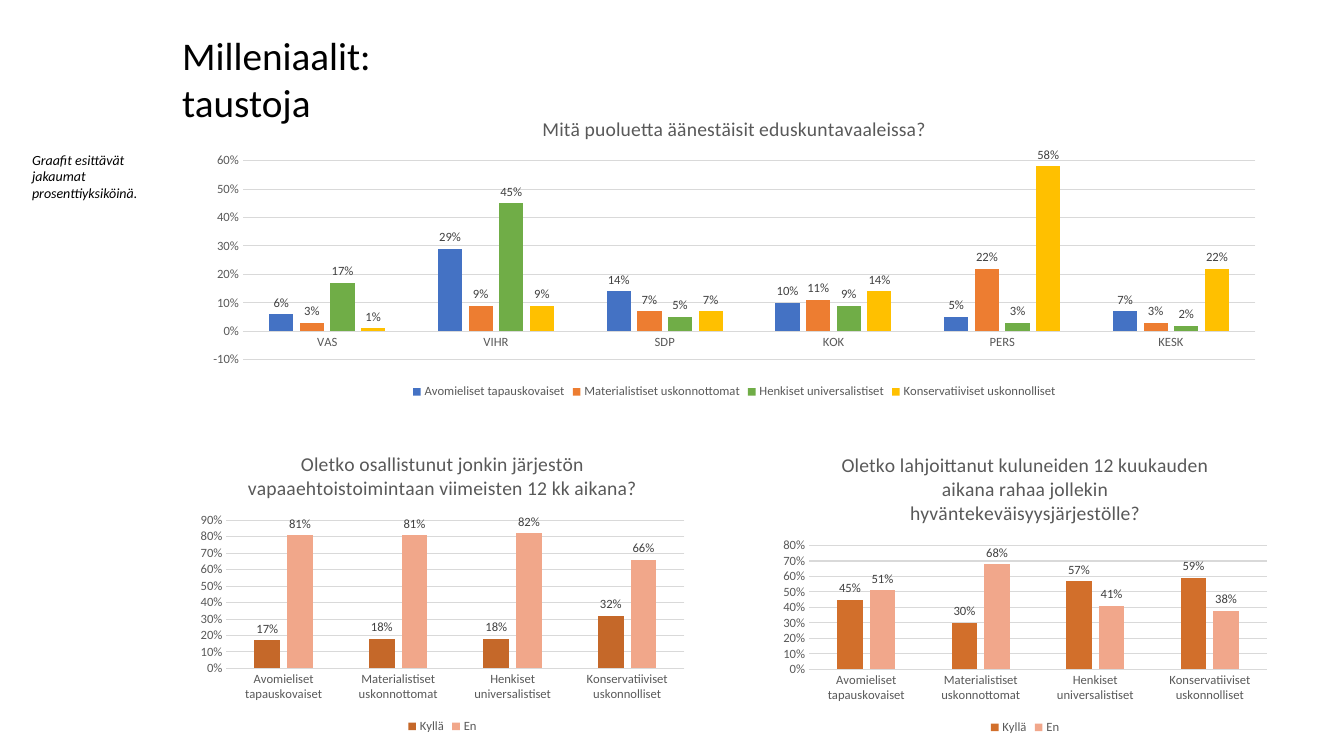
from pptx import Presentation
from pptx.chart.data import CategoryChartData
from pptx.dml.color import RGBColor
from pptx.enum.chart import XL_CHART_TYPE, XL_LABEL_POSITION, XL_LEGEND_POSITION, XL_TICK_MARK
from pptx.util import Pt

FONT = "Calibri"
GREY, LABEL, GRID, BLACK = "595959", "404040", "D9D9D9", "000000"
GROUPS = ["Avomieliset tapauskovaiset", "Materialistiset uskonnottomat",
          "Henkiset universalistiset", "Konservatiiviset uskonnolliset"]

CHARTS = [
    {"title": "Mitä puoluetta äänestäisit eduskuntavaaleissa?",
     "box": (136.8, 71.28, 775.44, 216.72), "scale": (-0.1, 0.6),
     "categories": ["VAS", "VIHR", "SDP", "KOK", "PERS", "KESK"],
     "series": [(GROUPS[0], "4472C4", (0.06, 0.29, 0.14, 0.10, 0.05, 0.07)),
                (GROUPS[1], "ED7D31", (0.03, 0.09, 0.07, 0.11, 0.22, 0.03)),
                (GROUPS[2], "70AD47", (0.17, 0.45, 0.05, 0.09, 0.03, 0.02)),
                (GROUPS[3], "FFC000", (0.01, 0.09, 0.07, 0.14, 0.58, 0.22))]},
    {"title": "Oletko osallistunut jonkin järjestön vapaaehtoistoimintaan viimeisten 12 kk aikana?",
     "box": (136.08, 311.04, 360, 216), "scale": (0, 0.9),
     "categories": GROUPS,
     "series": [("Kyllä", "C56829", (0.17, 0.18, 0.18, 0.32)),
                ("En", "F1A78A", (0.81, 0.81, 0.82, 0.66))]},
    {"title": "Oletko lahjoittanut kuluneiden 12 kuukauden aikana rahaa jollekin "
              "hyväntekeväisyysjärjestölle?",
     "box": (552.24, 311.76, 360, 216), "scale": (0, 0.8),
     "categories": GROUPS,
     "series": [("Kyllä", "D26F2B", (0.45, 0.30, 0.57, 0.59)),
                ("En", "F1A78B", (0.51, 0.68, 0.41, 0.38))]},
]

TEXTS = [
    ("Milleniaalit: taustoja", (123.12, 18.72, 244.8, 41.04), 28, False, 60),
    ("Graafit esittävät jakaumat prosenttiyksiköinä.", (15.84, 104.4, 95.76, 43.92), 10, True, 7.2),
]


def rgb(color):
    return RGBColor.from_string(color)


def style_font(font, size, color, italic=False):
    font.name, font.size = FONT, Pt(size)
    font.bold, font.italic = False, italic
    font.color.rgb = rgb(color)


def style_line(line):
    line.color.rgb = rgb(GRID)
    line.width = Pt(0.75)


def style_axes(chart, scale):
    cat, val = chart.category_axis, chart.value_axis
    for axis in (cat, val):
        axis.major_tick_mark = axis.minor_tick_mark = XL_TICK_MARK.NONE
        style_font(axis.tick_labels.font, 9, GREY)
    style_line(cat.format.line)
    val.format.line.fill.background()
    val.has_major_gridlines = True
    style_line(val.major_gridlines.format.line)
    val.minimum_scale, val.maximum_scale = scale
    val.major_unit = 0.1
    val.tick_labels.number_format = "0%"
    val.tick_labels.number_format_is_linked = False


def style_series(series, color):
    series.format.fill.solid()
    series.format.fill.fore_color.rgb = rgb(color)
    series.invert_if_negative = False
    labels = series.data_labels
    labels.show_value = True
    labels.position = XL_LABEL_POSITION.OUTSIDE_END
    labels.number_format = "0%"
    labels.number_format_is_linked = False
    style_font(labels.font, 9, LABEL)


def add_column_chart(s, content):
    data = CategoryChartData(number_format="0%")
    data.categories = content["categories"]
    for name, _, values in content["series"]:
        data.add_series(name, values)
    box = [Pt(v) for v in content["box"]]
    chart = s.shapes.add_chart(XL_CHART_TYPE.COLUMN_CLUSTERED, *box, data).chart
    style_font(chart.font, 10, BLACK)
    chart.has_title = True
    tf = chart.chart_title.text_frame
    tf.text = content["title"]
    style_font(tf.paragraphs[0].runs[0].font, 14, GREY)
    chart.chart_title.include_in_layout = False
    chart.has_legend = True
    chart.legend.position = XL_LEGEND_POSITION.BOTTOM
    chart.legend.include_in_layout = False
    style_font(chart.legend.font, 9, GREY)
    style_axes(chart, content["scale"])
    plot = chart.plots[0]
    plot.gap_width, plot.overlap, plot.vary_by_categories = 219, -27, False
    for series, (_, color, _) in zip(plot.series, content["series"]):
        style_series(series, color)


def add_text(s, text, box, size, italic, margin_right):
    tf = s.shapes.add_textbox(*[Pt(v) for v in box]).text_frame
    tf.word_wrap = True
    tf.margin_right = Pt(margin_right)
    tf.text = text
    style_font(tf.paragraphs[0].runs[0].font, size, BLACK, italic)


def main():
    prs = Presentation()
    prs.slide_width, prs.slide_height = Pt(960), Pt(540)
    s = prs.slides.add_slide(prs.slide_layouts[6])
    for content in CHARTS:
        add_column_chart(s, content)
    for entry in TEXTS:
        add_text(s, *entry)
    prs.save("out.pptx")


if __name__ == "__main__":
    main()
